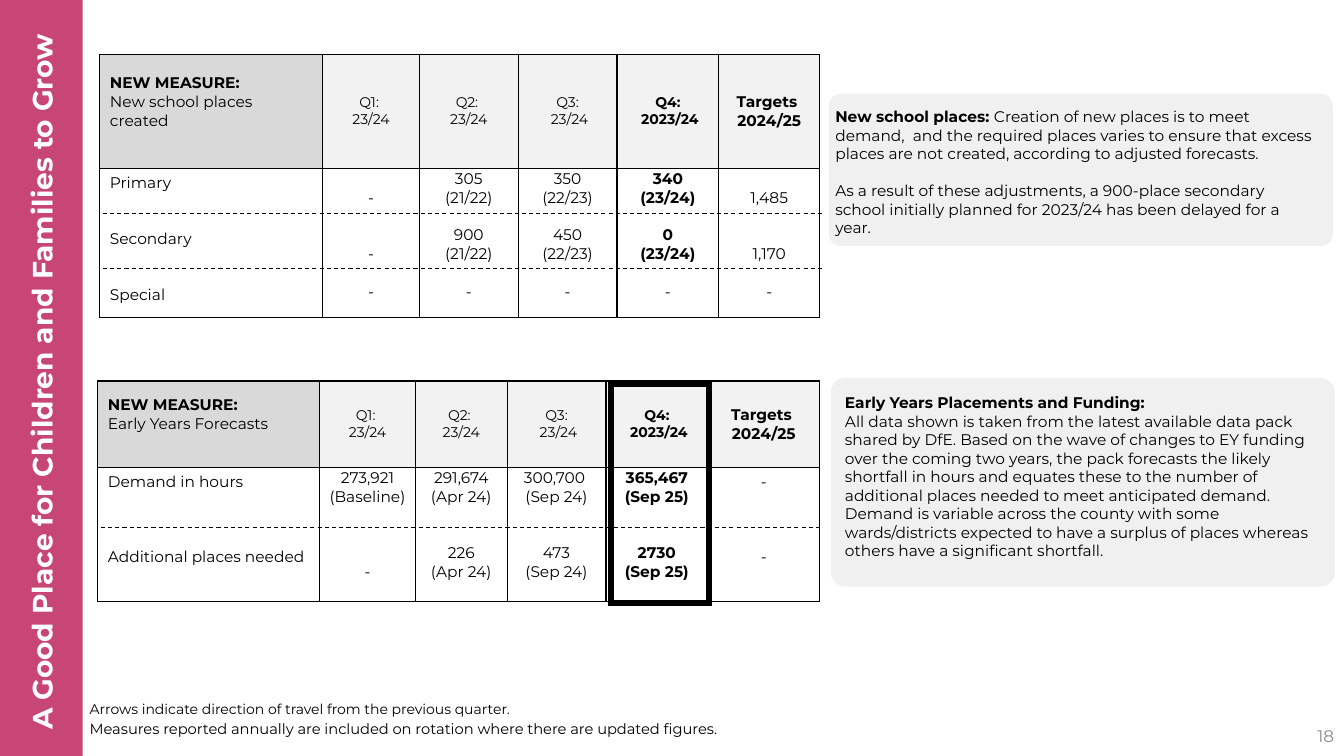
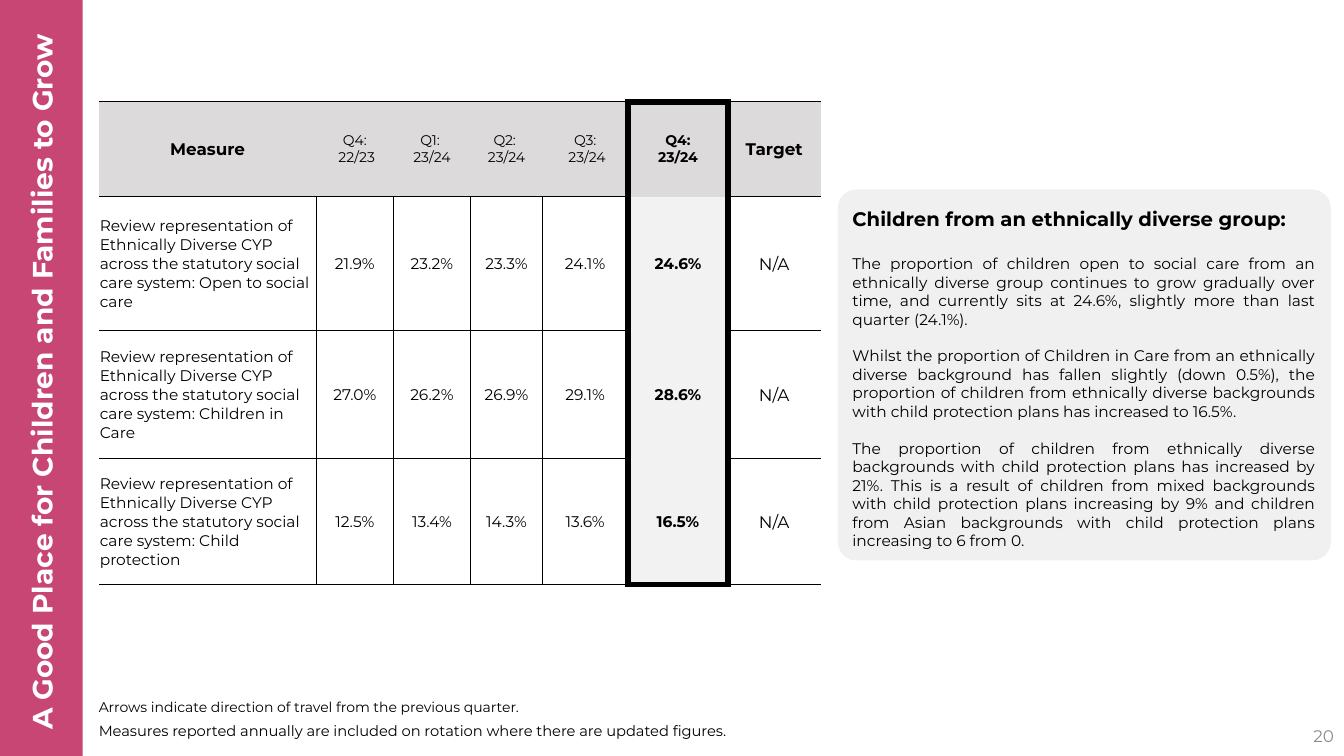
import dataclasses

import lxml.etree
import pptx
import pptx.dml.color
import pptx.enum.dml
import pptx.enum.shapes
import pptx.enum.text
import pptx.oxml.ns
import pptx.util

Inches = pptx.util.Inches
Pt = pptx.util.Pt
qn = pptx.oxml.ns.qn
ALIGN = pptx.enum.text.PP_ALIGN
ANCHOR = pptx.enum.text.MSO_ANCHOR


@dataclasses.dataclass(frozen=True)
class Theme:
    """Colours, type sizes and line widths that the slides share."""

    font: str = "Montserrat"
    band: str = "C84674"
    white: str = "FFFFFF"
    ink: str = "000000"
    page_grey: str = "8C8C8C"
    label_grey: str = "D9D9D9"
    quarter_grey: str = "F2F2F2"
    header_grey: str = "DCDADA"
    panel_opacity: int = 38
    title: float = 20
    heading: float = 14
    large: float = 12
    body: float = 11
    body_line: float = 13.4
    note: float = 10.5
    small: float = 10
    thin: float = 1
    dash: float = 0.75
    thick: float = 4.5


THEME = Theme()
BAND_TITLE = "A Good Place for Children and Families to Grow "
NOTES = (
    ("Arrows indicate direction of travel from the previous quarter.", THEME.small),
    ("Measures reported annually are included on rotation where there are updated figures.", THEME.note),
)
QUARTERS = ["Q1: \n23/24", "Q2: \n23/24", "Q3:\n 23/24", "Q4:\n 2023/24", "Targets \n2024/25"]
Q4 = 4


@dataclasses.dataclass
class Remark:
    """A paragraph of commentary with an optional bold lead."""

    text: str = ""
    lead: str = ""
    gap: float = 0
    size: float = THEME.body


def rgb(value):
    """Return a colour from its hex code."""
    return pptx.dml.color.RGBColor.from_string(value)


def style(paragraph, size, bold=False, colour=THEME.ink, align=ALIGN.LEFT):
    """Set the font and alignment of a paragraph."""
    paragraph.alignment = align
    font = paragraph.font
    font.name, font.size, font.bold = THEME.font, Pt(size), bold
    font.color.rgb = rgb(colour)


def set_insets(holder, left, top, right, bottom):
    """Set the four inner margins of a text frame or a cell."""
    holder.margin_left, holder.margin_top = Inches(left), Inches(top)
    holder.margin_right, holder.margin_bottom = Inches(right), Inches(bottom)


def text_area(slide, box, insets):
    """Add a wrapping text box and return its text frame."""
    frame = slide.shapes.add_textbox(*map(Inches, box)).text_frame
    frame.word_wrap = True
    set_insets(frame, *insets)
    return frame


def title_band(slide):
    """Turn the title placeholder into the band on the left edge."""
    band = slide.shapes.title
    band.left, band.top, band.width, band.height = map(Inches, (-3.34, 3.34, 7.5, 0.82))
    band.rotation = 270
    band.fill.solid()
    band.fill.fore_color.rgb = rgb(THEME.band)
    frame = band.text_frame
    frame.text = BAND_TITLE
    frame.auto_size = pptx.enum.text.MSO_AUTO_SIZE.NONE
    frame.vertical_anchor = ANCHOR.MIDDLE
    set_insets(frame, 0, 0, 0, 0)
    style(frame.paragraphs[0], THEME.title, True, THEME.white, ALIGN.CENTER)


def page_number(slide, number):
    """Place the page number in the bottom right corner."""
    frame = text_area(slide, (10.33, 7.1, 3, 0.4), (0.1, 0.05, 0.1, 0.05))
    frame.vertical_anchor = ANCHOR.MIDDLE
    frame.text = str(number)
    style(frame.paragraphs[0], THEME.large, colour=THEME.page_grey, align=ALIGN.RIGHT)


def footnotes(slide, left, tops):
    """Place the two notes at the foot of the slide."""
    for (text, size), top in zip(NOTES, tops):
        frame = text_area(slide, (left, top, 6.46, 0.34), (0, 0, 0, 0))
        frame.text = text
        style(frame.paragraphs[0], size)


def commentary(slide, box, insets, corner, remarks, align=ALIGN.LEFT):
    """Place a rounded translucent panel of remarks."""
    panel = slide.shapes.add_shape(pptx.enum.shapes.MSO_SHAPE.ROUNDED_RECTANGLE, *map(Inches, box))
    panel.adjustments[0] = corner
    panel.shadow.inherit = False
    panel.line.fill.background()
    panel.fill.solid()
    panel.fill.fore_color.rgb = rgb(THEME.label_grey)
    tint = next(panel.element.spPr.iter(qn("a:srgbClr")))
    lxml.etree.SubElement(tint, qn("a:alpha"), val=str(THEME.panel_opacity * 1000))
    frame = panel.text_frame
    frame.word_wrap = True
    frame.vertical_anchor = ANCHOR.TOP
    set_insets(frame, *insets, 0)
    for index, remark in enumerate(remarks):
        paragraph = frame.add_paragraph() if index else frame.paragraphs[0]
        style(paragraph, remark.size, align=align)
        paragraph.space_before = Pt(remark.gap)
        for text, bold in ((remark.lead, True), (remark.text, False)):
            if text:
                run = paragraph.add_run()
                run.text = text
                run.font.bold = bold


def fill_cell(cell, text, size, bold=False, colour=None, align=ALIGN.CENTER, anchor=ANCHOR.MIDDLE):
    """Write, colour and format one table cell."""
    cell.text = text
    cell.vertical_anchor = anchor
    for paragraph in cell.text_frame.paragraphs:
        style(paragraph, size, bold and paragraph.text != "-", align=align)
    if colour:
        cell.fill.solid()
        cell.fill.fore_color.rgb = rgb(colour)
    else:
        cell.fill.background()


def add_grid(slide, left, top, widths, heights):
    """Add an unbanded table with the given columns and rows."""
    box = (left, top, sum(widths), sum(heights))
    grid = slide.shapes.add_table(len(heights), len(widths), *map(Inches, box))
    grid.table.first_row = grid.table.horz_banding = False
    for column, width in zip(grid.table.columns, widths):
        column.width = Inches(width)
    for row, height in zip(grid.table.rows, heights):
        row.height = Inches(height)
    return grid


def rule_grid(grid, upright, level):
    """Draw cell borders from rules giving the width of each grid line."""
    columns = len(grid.table.columns)
    for index, properties in enumerate(grid.element.iter(qn("a:tcPr"))):
        row, column = divmod(index, columns)
        edges = (
            ("a:lnL", upright(row, column)),
            ("a:lnR", upright(row, column + 1)),
            ("a:lnT", level(row, column)),
            ("a:lnB", level(row + 1, column)),
        )
        for place, (tag, width) in enumerate(edges):
            edge = lxml.etree.SubElement(properties, qn(tag), w=str(int(Pt(width))))
            paint = lxml.etree.SubElement(edge, qn("a:solidFill" if width else "a:noFill"))
            if width:
                lxml.etree.SubElement(paint, qn("a:srgbClr"), val=THEME.ink)
            properties.insert(place, edge)


def even_rules(grid, width):
    """Draw every border of a table with one width."""
    rule_grid(grid, lambda row, line: width, lambda line, column: width)


def dashed_rule(slide, left, top, width):
    """Draw a dashed line across a table."""
    rule = slide.shapes.add_connector(
        pptx.enum.shapes.MSO_CONNECTOR.STRAIGHT, *map(Inches, (left, top, left + width, top))
    )
    rule.line.color.rgb = rgb(THEME.ink)
    rule.line.width = Pt(THEME.dash)
    rule.line.dash_style = pptx.enum.dml.MSO_LINE.DASH
    lxml.etree.SubElement(rule.element.spPr, qn("a:effectLst"))


def quarter_box(slide, left, top, width, height):
    """Frame the latest quarter with a heavy one-cell table."""
    grid = add_grid(slide, left, top, [width], [height])
    grid.table.cell(0, 0).fill.background()
    even_rules(grid, THEME.thick)


def new_measure_table(slide, left, top, widths, heights, measure, columns, dashes):
    """Place a new measure's table, each column listing gaps in lines and texts."""
    grid = add_grid(slide, left, top, widths, heights)
    table = grid.table
    fill_cell(table.cell(0, 0), f"NEW MEASURE:\n{measure}", THEME.body, colour=THEME.label_grey, align=ALIGN.LEFT)
    table.cell(0, 0).text_frame.paragraphs[0].font.bold = True
    table.cell(0, 0).margin_bottom = Inches(0.24)
    for column, text in enumerate(QUARTERS, 1):
        size = THEME.body if column > Q4 else THEME.small
        fill_cell(table.cell(0, column), text, size, column >= Q4, THEME.quarter_grey)
    for column, (inset, entries) in enumerate(columns):
        cell = table.cell(1, column)
        align = ALIGN.CENTER if column else ALIGN.LEFT
        text = "\n".join(entry for gap, entry in entries)
        fill_cell(cell, text, THEME.body, column == Q4, align=align, anchor=ANCHOR.TOP)
        side = 0.01 if column else 0.1
        set_insets(cell, side, inset, side, 0)
        for paragraph, (gap, entry) in zip(cell.text_frame.paragraphs, entries):
            paragraph.space_before = Pt(gap * THEME.body_line)
    even_rules(grid, THEME.thin)
    for depth in dashes:
        dashed_rule(slide, left + 0.03, top + depth, 7.14)


def diversity_table(slide, left, top, widths, heights, headers, rows, boxed):
    """Place the table of quarterly shares with the latest quarter boxed."""
    grid = add_grid(slide, left, top, widths, heights)
    last_row, last_column = len(heights), len(widths)
    for column, text in enumerate(headers):
        outer = column in (0, last_column - 1)
        size = THEME.large if outer else THEME.small
        fill_cell(grid.table.cell(0, column), text, size, outer or column == boxed, THEME.header_grey)
    for index, (group, *shares) in enumerate(rows, 1):
        label = f"Review representation of Ethnically Diverse CYP across the statutory social care system: {group}"
        for column, text in enumerate([label, *shares, "N/A"]):
            cell = grid.table.cell(index, column)
            latest = column == boxed
            size = THEME.large if column == last_column - 1 else THEME.body
            align = ALIGN.CENTER if column else ALIGN.LEFT
            fill_cell(cell, text, size, latest, THEME.quarter_grey if latest else None, align)
            set_insets(cell, 0.01, 0.01, 0.01, 0)

    def upright(row, line):
        """Return the width of a vertical grid line."""
        if line in (boxed, boxed + 1):
            return THEME.thick
        return THEME.thin if row and 0 < line < last_column else 0

    def level(line, column):
        """Return the width of a horizontal grid line."""
        if column == boxed:
            return THEME.thick if line in (0, last_row) else 0
        return THEME.thin

    rule_grid(grid, upright, level)


def base_slide(deck, number, notes_left, note_tops):
    """Add a slide with the band, page number and notes."""
    slide = deck.slides.add_slide(deck.slide_layouts[5])
    title_band(slide)
    page_number(slide, number)
    footnotes(slide, notes_left, note_tops)
    return slide


def places_slide(deck):
    """Build the slide on school places and early years."""
    slide = base_slide(deck, 18, 0.89, (6.95, 7.14))
    new_measure_table(slide, 0.97, 3.78, [2.2, 0.95, 0.91, 0.98, 1.01, 1.11], [0.86, 1.33], "Early Years Forecasts", [
        (0.05, [(0, "Demand in hours"), (3, "Additional places needed")]),
        (0.01, [(0, "273,921 (Baseline)"), (3, "-")]),
        (0.01, [(0, "291,674 (Apr 24)"), (2, "226"), (0, "(Apr 24)")]),
        (0.01, [(0, "300,700 "), (0, "(Sep 24)"), (2, "473"), (0, "(Sep 24)")]),
        (0.01, [(0, "365,467"), (0, "(Sep 25)"), (2, "2730"), (0, "(Sep 25)")]),
        (0.05, [(0, "-"), (3, "-")]),
    ], [1.45])
    quarter_box(slide, 6.06, 3.81, 0.97, 2.17)
    new_measure_table(slide, 0.99, 0.54, [2.21, 0.96, 0.98, 0.98, 1.01, 1], [1.13, 1.48], "New school places created", [
        (0.05, [(0, "Primary"), (2, "Secondary"), (2, "Special")]),
        (0.2, [(0, "-"), (2, "-"), (1, "-")]),
        (0.01, [(0, "305"), (0, "(21/22)"), (1, "900"), (0, "(21/22)"), (1, "-")]),
        (0.01, [(0, "350"), (0, "(22/23)"), (1, "450"), (0, "(22/23)"), (1, "-")]),
        (0.01, [(0, "340"), (0, "(23/24)"), (1, "0"), (0, "(23/24)"), (1, "-")]),
        (0.2, [(0, "1,485"), (2, "1,170"), (1, "-")]),
    ], [1.58, 2.12])
    commentary(slide, (8.22, 0.93, 5, 1.51), (0.03, 0.1, 0.13), 0.08, [
        Remark("Creation of new places is to meet demand,  and the required places varies to ensure that excess places are not created, according to adjusted forecasts.", "New school places: "),
        Remark("As a result of these adjustments, a 900-place secondary school initially planned for 2023/24 has been delayed for a year.", gap=THEME.body_line),
    ])
    commentary(slide, (8.24, 3.75, 5, 2.07), (0.1, 0.11, 0.01), 0.07, [
        Remark(lead="Early Years Placements and Funding:"),
        Remark("All data shown is taken from the latest available data pack shared by DfE. Based on the wave of changes to EY funding over the coming two years, the pack forecasts the likely shortfall in hours and equates these to the number of additional places needed to meet anticipated demand."),
        Remark("Demand is variable across the county with some wards/districts expected to have a surplus of places whereas others have a significant shortfall."),
    ])


def diversity_slide(deck):
    """Build the slide on ethnically diverse representation."""
    slide = base_slide(deck, 20, 0.98, (6.93, 7.16))
    headers = ["Measure", "Q4:\n 22/23", "Q1: \n23/24", "Q2: \n23/24", "Q3:\n 23/24", "Q4:\n23/24", "Target"]
    diversity_table(
        slide, 0.98, 1.01, [2.16, 0.76, 0.77, 0.71, 0.85, 0.99, 0.92], [0.94, 1.33, 1.27, 1.25], headers, [
            ("Open to social care", "21.9%", "23.2%", "23.3%", "24.1%", "24.6%"),
            ("Children in Care", "27.0%", "26.2%", "26.9%", "29.1%", "28.6%"),
            ("Child protection", "12.5%", "13.4%", "14.3%", "13.6%", "16.5%"),
        ], boxed=5)
    commentary(slide, (8.31, 1.88, 4.89, 3.68), (0.09, 0.12, 0.1), 0.05, [
        Remark(lead="Children from an ethnically diverse group: ", size=THEME.heading),
        Remark("The proportion of children open to social care from an ethnically diverse group continues to grow gradually over time, and currently sits at 24.6%, slightly more than last quarter (24.1%).", gap=17),
        Remark("Whilst the proportion of Children in Care from an ethnically diverse background has fallen slightly (down 0.5%), the proportion of children from ethnically diverse backgrounds with child protection plans has increased to 16.5%.", gap=13),
        Remark("The proportion of children from ethnically diverse backgrounds with child protection plans has increased by 21%. This is a result of children from mixed backgrounds with child protection plans increasing by 9% and children from Asian backgrounds with child protection plans increasing to 6 from 0.", gap=13),
    ], ALIGN.JUSTIFY)


def main():
    """Build and save the presentation."""
    deck = pptx.Presentation()
    deck.slide_width, deck.slide_height = Inches(13.33), Inches(7.5)
    places_slide(deck)
    diversity_slide(deck)
    deck.save("out.pptx")


if __name__ == "__main__":
    main()
